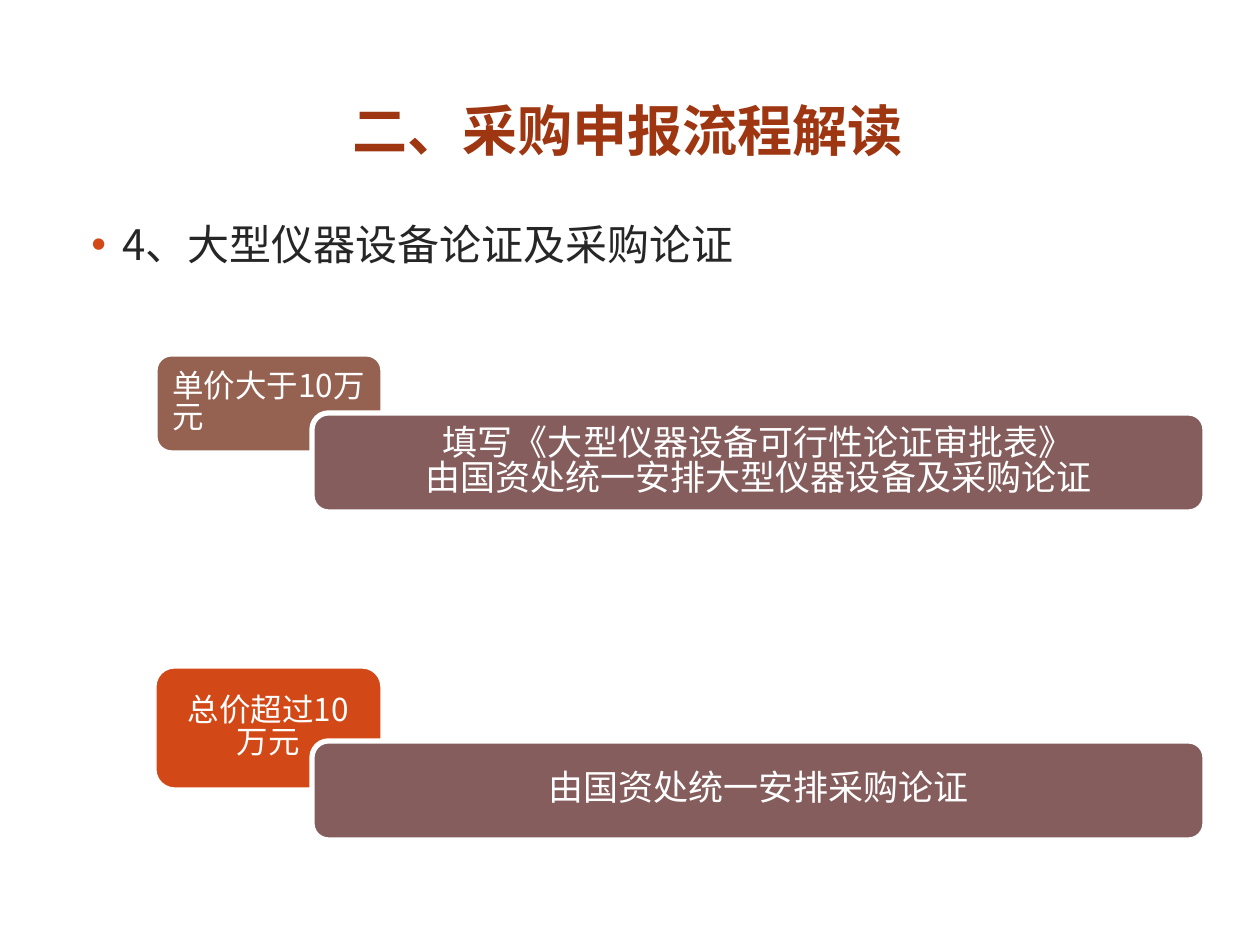
from dataclasses import dataclass

from lxml import etree
from pptx import Presentation
from pptx.dml.color import RGBColor
from pptx.enum.shapes import MSO_SHAPE
from pptx.enum.text import MSO_ANCHOR, PP_ALIGN
from pptx.oxml.ns import qn
from pptx.util import Emu, Pt

ROUNDED = MSO_SHAPE.ROUNDED_RECTANGLE
TOP, MIDDLE = MSO_ANCHOR.TOP, MSO_ANCHOR.MIDDLE
LEFT, CENTER = PP_ALIGN.LEFT, PP_ALIGN.CENTER
PX_PER_INCH = 126
FONT = "Noto Sans CJK SC"
WHITE, RUST, ORANGE = "FFFFFF", "9E3611", "D34817"
BROWN, MAUVE, DARK = "956251", "855D5D", "262626"


@dataclass(frozen=True)
class Box:
    left: int
    top: int
    width: int
    height: int


@dataclass(frozen=True)
class Card:
    box: Box
    fill: str
    lines: tuple[str, ...]
    size: int
    align: PP_ALIGN = CENTER


def px(value: int) -> Emu:
    return Emu(round(value * 914400 / PX_PER_INCH))


def place(box: Box) -> tuple[Emu, Emu, Emu, Emu]:
    return px(box.left), px(box.top), px(box.width), px(box.height)


def color(value: str) -> RGBColor:
    return RGBColor.from_string(value)


def write(shape, lines: tuple[str, ...], *, size: float, fill: str,
          bold: bool = False, align: PP_ALIGN = LEFT,
          anchor: MSO_ANCHOR = MIDDLE, spacing: float = 1.0) -> None:
    frame = shape.text_frame
    frame.word_wrap = True
    frame.vertical_anchor = anchor
    frame.text = "\n".join(lines)
    for paragraph in frame.paragraphs:
        paragraph.alignment = align
        paragraph.line_spacing = spacing
        for run in paragraph.runs:
            font = run.font
            font.name, font.size, font.bold = FONT, Pt(size), bold
            font.color.rgb = color(fill)
            east_asian = etree.SubElement(run._r.get_or_add_rPr(), qn("a:ea"))
            east_asian.set("typeface", FONT)


def add_bullet(paragraph, fill: str, margin: int, indent: int) -> None:
    properties = paragraph._p.get_or_add_pPr()
    properties.set("marL", str(px(margin)))
    properties.set("indent", str(px(indent)))
    bullet_color = etree.SubElement(properties, qn("a:buClr"))
    etree.SubElement(bullet_color, qn("a:srgbClr")).set("val", fill)
    etree.SubElement(properties, qn("a:buFont")).set("typeface", "Arial")
    etree.SubElement(properties, qn("a:buChar")).set("char", "•")


def draw_card(slide, card: Card) -> None:
    shape = slide.shapes.add_shape(ROUNDED, *place(card.box))
    shape.shadow.inherit = False
    shape.fill.solid()
    shape.fill.fore_color.rgb = color(card.fill)
    shape.line.color.rgb = color(WHITE)
    shape.line.width = Pt(3)
    write(shape, card.lines, size=card.size, fill=WHITE, align=card.align,
          spacing=0.83)


CARDS = (
    Card(Box(155, 354, 228, 99), BROWN, ("单价大于10万元",), 18, LEFT),
    Card(Box(154, 666, 229, 124), ORANGE, ("总价超过10万元",), 18),
    Card(Box(312, 413, 893, 99), MAUVE,
         ("填写《大型仪器设备可行性论证审批表》",
          "由国资处统一安排大型仪器设备及采购论证"), 20),
    Card(Box(312, 741, 893, 99), MAUVE, ("由国资处统一安排采购论证",), 20),
)


def main() -> None:
    presentation = Presentation()
    presentation.slide_width, presentation.slide_height = px(1260), px(945)
    slide = presentation.slides.add_slide(presentation.slide_layouts[6])

    title = slide.shapes.add_textbox(*place(Box(59, 57, 1138, 144)))
    write(title, ("二、采购申报流程解读",), size=31.5, fill=RUST, bold=True,
          align=CENTER)

    body = slide.shapes.add_textbox(*place(Box(63, 221, 1134, 708)))
    write(body, ("4、大型仪器设备论证及采购论证",), size=24, fill=DARK,
          anchor=TOP, spacing=0.83)
    add_bullet(body.text_frame.paragraphs[0], ORANGE, 47, -31)

    for card in CARDS:
        draw_card(slide, card)
    presentation.save("out.pptx")


if __name__ == "__main__":
    main()
